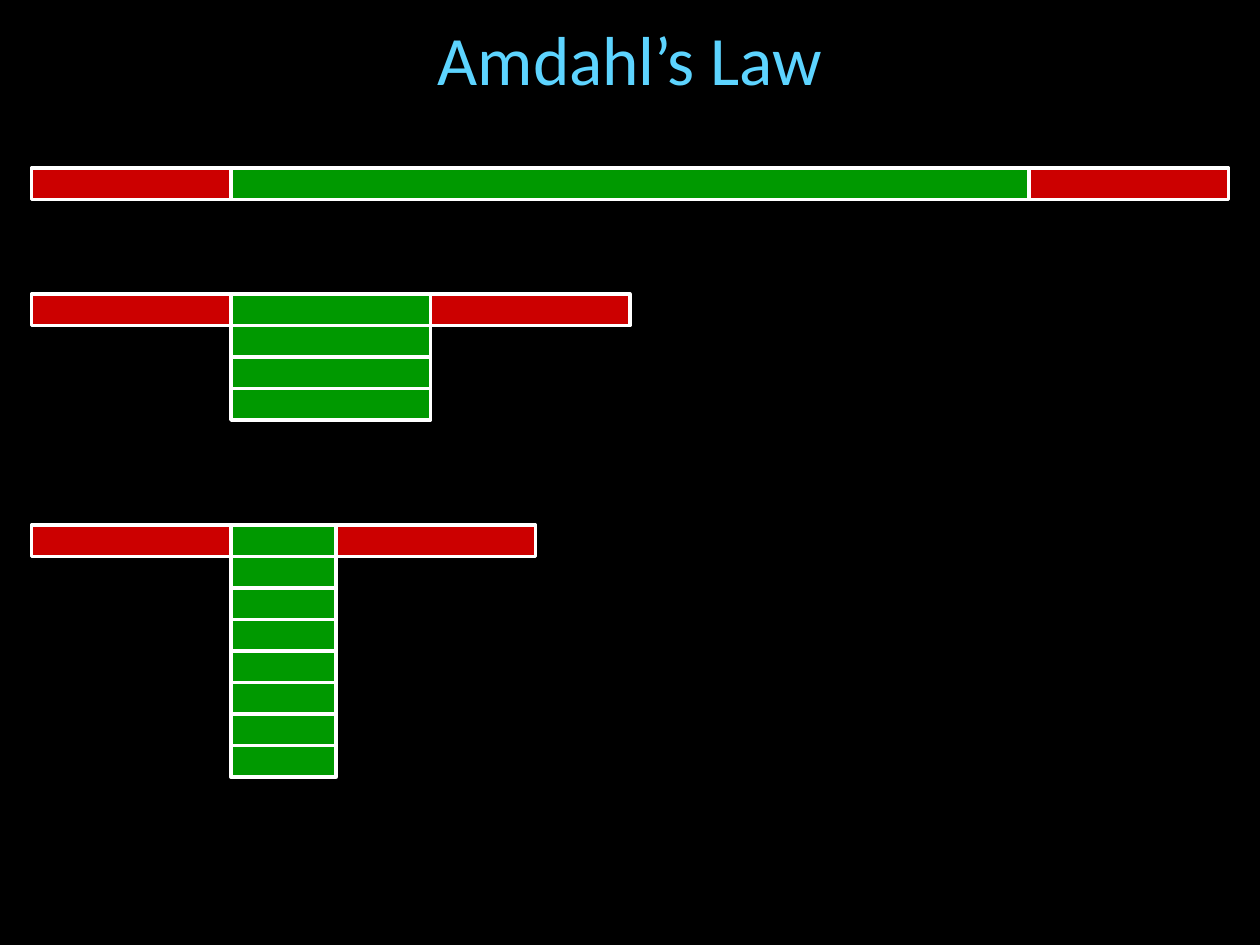
from dataclasses import dataclass

import pptx
import pptx.dml.color
import pptx.enum.shapes
import pptx.enum.text
import pptx.util

Cm = pptx.util.Cm
RGB = pptx.dml.color.RGBColor.from_string
UNIT = Cm(2.54) / 12
LEFT = 3
BAR_HEIGHT = 3
SERIAL_WIDTH = 19


@dataclass(frozen=True)
class Theme:
    background: str = "000000"
    title: str = "5DD4FF"
    serial: str = "CC0000"
    parallel: str = "009900"
    border: str = "FFFFFF"
    font: str = "Calibri"
    title_size: float = 39.6
    border_width: float = 2


@dataclass(frozen=True)
class Run:
    top: int
    processors: int
    parallel_width: int


THEME = Theme()
RUNS = [Run(16, 1, 76), Run(28, 4, 19), Run(50, 8, 10)]


def grid(*units: int) -> list[int]:
    return [round(u * UNIT) for u in units]


def set_format(obj, values: dict) -> None:
    for name, value in values.items():
        setattr(obj, name, value)


def add_title(s, text: str) -> None:
    tf = s.shapes.add_textbox(*grid(LEFT, 2, 114, 7)).text_frame
    set_format(tf, {
        "word_wrap": True,
        "vertical_anchor": pptx.enum.text.MSO_ANCHOR.MIDDLE,
        "margin_top": 0,
        "margin_bottom": 0,
    })
    p = tf.paragraphs[0]
    p.alignment = pptx.enum.text.PP_ALIGN.CENTER
    r = p.add_run()
    r.text = text
    set_format(r.font, {"name": THEME.font, "size": pptx.util.Pt(THEME.title_size)})
    r.font.color.rgb = RGB(THEME.title)


def add_bar(s, left: int, top: int, width: int, color: str) -> None:
    sp = s.shapes.add_shape(
        pptx.enum.shapes.MSO_SHAPE.RECTANGLE, *grid(left, top, width, BAR_HEIGHT))
    sp.shadow.inherit = False
    sp.fill.solid()
    sp.fill.fore_color.rgb = RGB(color)
    sp.line.color.rgb = RGB(THEME.border)
    sp.line.width = pptx.util.Pt(THEME.border_width)


def add_run_bars(s, run: Run) -> None:
    fork = LEFT + SERIAL_WIDTH
    join = fork + run.parallel_width
    add_bar(s, LEFT, run.top, SERIAL_WIDTH, THEME.serial)
    add_bar(s, join, run.top, SERIAL_WIDTH, THEME.serial)
    for i in range(run.processors):
        add_bar(s, fork, run.top + i * BAR_HEIGHT, run.parallel_width, THEME.parallel)


def main() -> None:
    prs = pptx.Presentation()
    set_format(prs, {"slide_width": Cm(25.4), "slide_height": Cm(19.05)})
    s = prs.slides.add_slide(prs.slide_layouts[6])
    s.background.fill.solid()
    s.background.fill.fore_color.rgb = RGB(THEME.background)
    add_title(s, "Amdahl’s Law")
    for run in RUNS:
        add_run_bars(s, run)
    prs.save("out.pptx")


if __name__ == "__main__":
    main()
